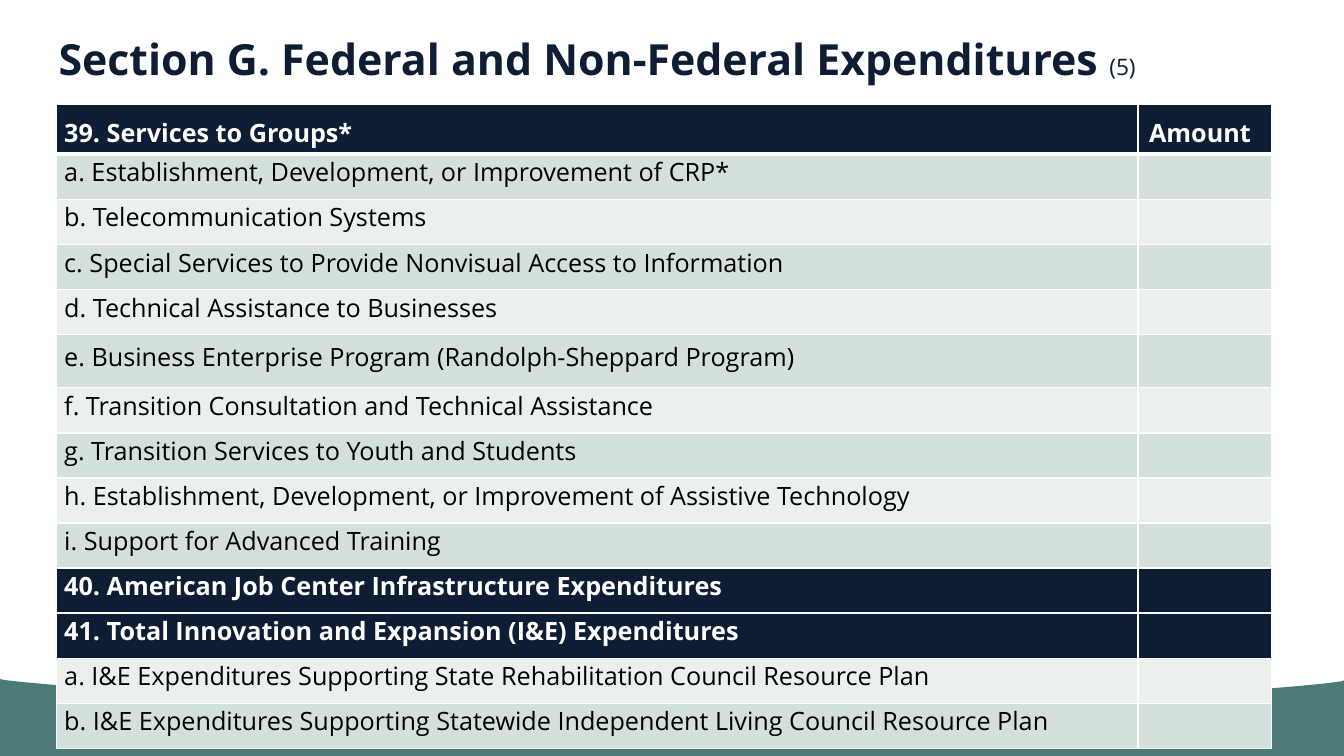
from lxml import etree
from pptx import Presentation
from pptx.dml.color import RGBColor
from pptx.enum.shapes import MSO_SHAPE
from pptx.enum.text import MSO_ANCHOR, MSO_AUTO_SIZE, PP_ALIGN
from pptx.oxml.ns import qn
from pptx.util import Pt

RECTANGLE = MSO_SHAPE.RECTANGLE
BOTTOM, MIDDLE = MSO_ANCHOR.BOTTOM, MSO_ANCHOR.MIDDLE
NO_AUTOFIT = MSO_AUTO_SIZE.NONE
LEFT = PP_ALIGN.LEFT

SLIDE_WIDTH, SLIDE_HEIGHT = 960, 540
FONT = "Open Sans"
NAVY, TEAL, WHITE, BLACK = "0D1D34", "4C7A76", "FFFFFF", "000000"
BANDS = ["EBF0EF", "D4E0DE"]
HEADER_HEIGHT, ROW_HEIGHT, TALL_ROW_HEIGHT = 35.7, 32.2, 38.2
TALL_ROW = 5
HEADING_ROWS = {0, 10, 11}
COLUMN_WIDTHS = [772.4, 95.2]
EXPENDITURES = [
    "39. Services to Groups*",
    "a. Establishment, Development, or Improvement of CRP*",
    "b. Telecommunication Systems",
    "c. Special Services to Provide Nonvisual Access to Information",
    "d. Technical Assistance to Businesses",
    "e. Business Enterprise Program (Randolph-Sheppard Program)",
    "f. Transition Consultation and Technical Assistance",
    "g. Transition Services to Youth and Students",
    "h. Establishment, Development, or Improvement of Assistive Technology",
    "i. Support for Advanced Training",
    "40. American Job Center Infrastructure Expenditures",
    "41. Total Innovation and Expansion (I&E) Expenditures",
    "a. I&E Expenditures Supporting State Rehabilitation Council Resource Plan",
    "b. I&E Expenditures Supporting Statewide Independent Living Council Resource Plan",
]


def color(hex_code):
    return RGBColor.from_string(hex_code)


def format_font(font, size, hex_code, bold):
    font.name = FONT
    font.size = Pt(size)
    font.bold = bold
    font.color.rgb = color(hex_code)


def paint(shape, hex_code):
    shape.shadow.inherit = False
    shape.fill.solid()
    shape.fill.fore_color.rgb = color(hex_code)
    shape.line.fill.background()


def curve_points(start, control_1, control_2, end, steps=24):
    points = []
    for step in range(1, steps + 1):
        t = step / steps
        weights = [(1 - t) ** 3, 3 * t * (1 - t) ** 2, 3 * t ** 2 * (1 - t), t ** 3]
        corners = [start, control_1, control_2, end]
        points.append(tuple(sum(w * c[axis] for w, c in zip(weights, corners))
                            for axis in (0, 1)))
    return points


def add_wave(slide):
    strip = slide.shapes.add_shape(RECTANGLE, 0, Pt(533), Pt(SLIDE_WIDTH), Pt(7))
    paint(strip, TEAL)
    start, middle, end = (0, 485), (477, 512), (SLIDE_WIDTH, 486)
    points = curve_points(start, (0, 488), (317, 511), middle)
    points += curve_points(middle, (637, 512), (SLIDE_WIDTH, 490), end)
    points += [(SLIDE_WIDTH, SLIDE_HEIGHT), (0, SLIDE_HEIGHT)]
    builder = slide.shapes.build_freeform(Pt(start[0]), Pt(start[1]))
    builder.add_line_segments([(Pt(x), Pt(y)) for x, y in points], close=True)
    paint(builder.convert_to_shape(), TEAL)


def add_title(slide):
    title = slide.shapes.title
    title.left, title.top, title.width, title.height = Pt(34.6), Pt(14.4), Pt(867.6), Pt(49)
    frame = title.text_frame
    frame.auto_size = NO_AUTOFIT
    frame.word_wrap = True
    frame.vertical_anchor = BOTTOM
    paragraph = frame.paragraphs[0]
    paragraph.alignment = LEFT
    paragraph.line_spacing = 1.02
    for text, size, bold in [("Section G. Federal and Non-Federal Expenditures ", 30.6, True),
                             ("(5)", 16.2, False)]:
        run = paragraph.add_run()
        run.text = text
        format_font(run.font, size, NAVY, bold)


def set_borders(cell, bottom_width):
    properties = cell._tc.get_or_add_tcPr()
    widths = {"a:lnL": 1, "a:lnR": 1, "a:lnT": 1, "a:lnB": bottom_width}
    for position, (tag, width) in enumerate(widths.items()):
        line = etree.Element(qn(tag), w=str(Pt(width)))
        fill = etree.SubElement(line, qn("a:solidFill"))
        etree.SubElement(fill, qn("a:srgbClr"), val=WHITE)
        properties.insert(position, line)


def fill_cell(cell, text, row, inset):
    heading = row in HEADING_ROWS
    cell.fill.solid()
    cell.fill.fore_color.rgb = color(NAVY if heading else BANDS[row % 2])
    set_borders(cell, 3 if row == 0 else 1)
    cell.vertical_anchor = MIDDLE
    cell.margin_left = cell.margin_right = Pt(inset)
    cell.margin_top = cell.margin_bottom = 0
    cell.text_frame.text = text
    paragraph = cell.text_frame.paragraphs[0]
    paragraph.line_spacing = 1.2 if row == 0 else Pt(18)
    format_font(paragraph.font, 18, WHITE if heading else BLACK, heading)
    for run in paragraph.runs:
        format_font(run.font, 18, WHITE if heading else BLACK, heading)


def add_expenditure_table(slide):
    heights = [ROW_HEIGHT] * len(EXPENDITURES)
    heights[0], heights[TALL_ROW] = HEADER_HEIGHT, TALL_ROW_HEIGHT
    table = slide.shapes.add_table(len(heights), 2, Pt(40.5), Pt(74.5),
                                   Pt(sum(COLUMN_WIDTHS)), Pt(sum(heights))).table
    table.horz_banding = False
    for column, width in zip(table.columns, COLUMN_WIDTHS):
        column.width = Pt(width)
    for row, (text, height) in enumerate(zip(EXPENDITURES, heights)):
        table.rows[row].height = Pt(height)
        fill_cell(table.cell(row, 0), text, row, 5.4)
        fill_cell(table.cell(row, 1), "Amount" if row == 0 else "", row, 7.9)


def main():
    presentation = Presentation()
    presentation.slide_width, presentation.slide_height = Pt(SLIDE_WIDTH), Pt(SLIDE_HEIGHT)
    slide = presentation.slides.add_slide(presentation.slide_layouts[5])
    add_wave(slide)
    add_title(slide)
    add_expenditure_table(slide)
    presentation.save("out.pptx")


if __name__ == "__main__":
    main()
